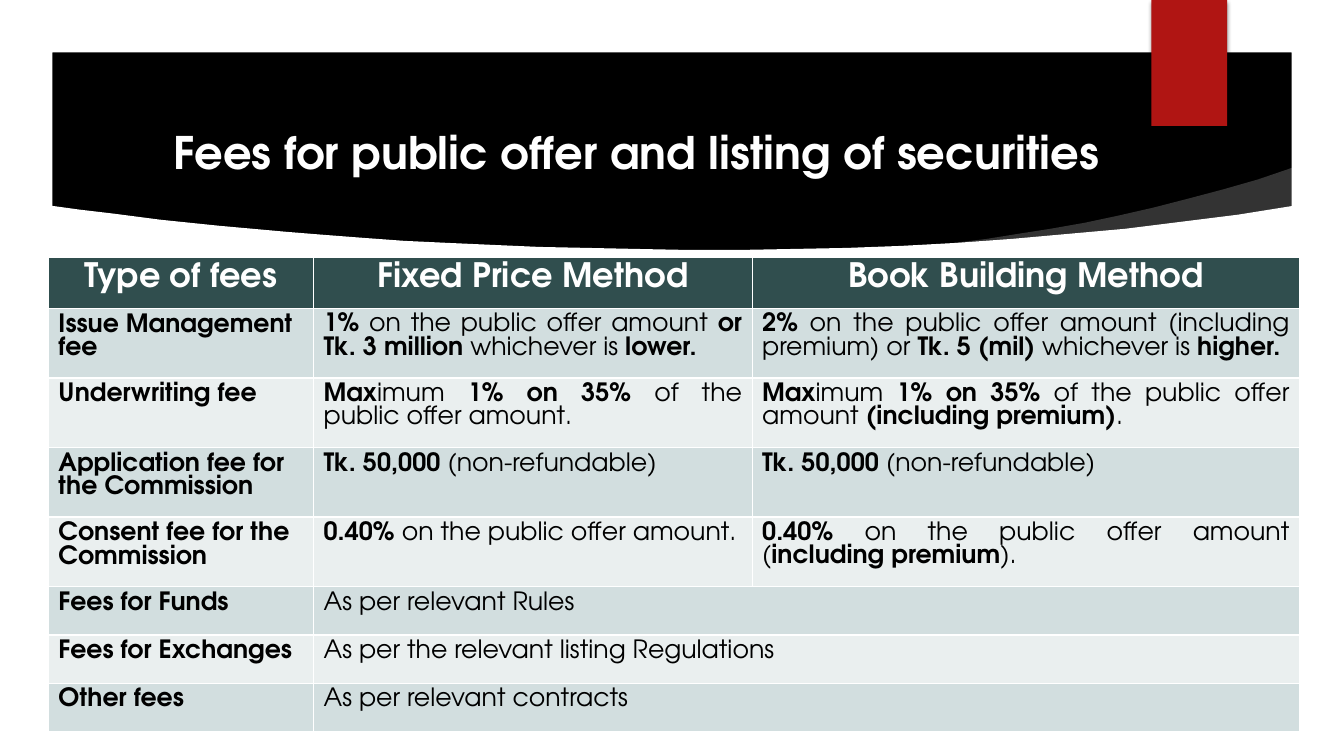
from lxml import etree
from pptx import Presentation
from pptx.dml.color import RGBColor
from pptx.enum.text import MSO_ANCHOR, PP_ALIGN
from pptx.enum.shapes import MSO_SHAPE
from pptx.oxml.ns import qn
from pptx.util import Inches, Pt

CENTER, LEFT, JUST = PP_ALIGN.CENTER, PP_ALIGN.LEFT, PP_ALIGN.JUSTIFY
MIDDLE = MSO_ANCHOR.MIDDLE
RECT = MSO_SHAPE.RECTANGLE
FONT = "TeX Gyre Adventor"
BLACK, WHITE, RED = "000000", "FFFFFF", "B01513"
DARK, BANDS = "304E4E", ("D2DEDF", "EAEFEF")
LEAD = 0.93

COLS = [2.63, 4.35, 5.43]
HEIGHTS = [0.51] + [0.69] * 4 + [0.48] * 3
HEADS = ["Type of fees", "Fixed Price Method", "Book Building Method"]
FEES = [
    ["Issue Management\nfee",
     "*1%* on the public offer amount *or Tk. 3 million *whichever is *lower.*",
     "*2%* on the public offer amount (including premium) or "
     "*Tk. 5 (mil)* whichever is *higher.*"],
    ["Underwriting fee",
     "*Max*imum *1% on 35% *of the public offer amount.",
     "*Max*imum *1% on 35%* of the public offer amount *(including premium)*."],
    ["Application fee for\nthe Commission",
     "*Tk. 50,000* (non-refundable)",
     "*Tk. 50,000* (non-refundable)"],
    ["Consent fee for the\nCommission",
     "*0.40% *on the public offer amount.",
     "*0.40%* on the public offer amount (*including premium*)."],
    ["Fees for Funds", "As per relevant Rules"],
    ["Fees for Exchanges", "As per the relevant listing Regulations"],
    ["Other fees", "As per relevant contracts"],
]

FRAME = [
    [(0, 0), (0, 7.5), (13.33, 7.5), (13.33, 0)],
    [(12.81, 6.98), (0.52, 6.98), (0.52, 0.52), (12.81, 0.52)],
]
CURVE = [
    (0.5, 2.04), (0.5, 7), (12.84, 7), (12.84, 2.04), (12.28, 2.13),
    (11.72, 2.2), (11.16, 2.27), (10.6, 2.32), (10.04, 2.37), (9.49, 2.41),
    (8.94, 2.44), (8.4, 2.46), (7.87, 2.47), (7.34, 2.48), (6.82, 2.48),
    (6.32, 2.47), (5.83, 2.46), (5.35, 2.45), (4.89, 2.43), (4.44, 2.41),
    (4.01, 2.39), (3.6, 2.36), (3.21, 2.33), (2.84, 2.3), (2.17, 2.24),
    (1.59, 2.18), (1.13, 2.12), (0.79, 2.08),
]
SWOOSH = [
    (9.34, 2.5), (10.4, 2.46), (11.7, 2.32), (12.9, 2.14), (12.83, 1.66),
    (12.48, 1.78), (12.13, 1.88), (11.79, 1.97), (11.44, 2.06), (11.09, 2.14),
    (10.76, 2.21), (10.42, 2.27), (10.1, 2.32), (9.79, 2.37), (9.3, 2.43),
]


def paint(fill, color):
    fill.solid()
    fill.fore_color.rgb = RGBColor.from_string(color)


def finish(shape, color):
    paint(shape.fill, color)
    shape.line.fill.background()
    shape.shadow.inherit = False


def outline(slide, loops, color):
    pen = None
    for loop in loops:
        points = [(Inches(x), Inches(y)) for x, y in loop]
        if pen is None:
            pen = slide.shapes.build_freeform(*points[0])
        else:
            pen.move_to(*points[0])
        pen.add_line_segments(points[1:], close=True)
    shape = pen.convert_to_shape()
    finish(shape, color)
    return shape


def fade(shape, share):
    color = shape.fill._xPr.find(qn("a:solidFill"))[0]
    etree.SubElement(color, qn("a:alpha"), val=str(share * 1000))


def shade(shape):
    effects = shape.element.spPr.find(qn("a:effectLst"))
    outer = etree.SubElement(effects, qn("a:outerShdw"), blurRad=str(Pt(3)),
                             dist=str(Pt(2)), dir="5400000", rotWithShape="0")
    color = etree.SubElement(outer, qn("a:srgbClr"), val=BLACK)
    etree.SubElement(color, qn("a:alpha"), val="45000")


def write(frame, text, size, color, align, lead=None):
    for at, line in enumerate(text.split("\n")):
        para = frame.paragraphs[0] if at == 0 else frame.add_paragraph()
        para.alignment = align
        if lead:
            para.line_spacing = Pt(round(size * lead, 1))
        for turn, part in enumerate(line.split("*")):
            if part:
                run = para.add_run()
                run.text = part
                font = run.font
                font.name, font.size, font.bold = FONT, Pt(size), turn % 2 == 1
                font.color.rgb = RGBColor.from_string(color)


def edge(cell):
    props = cell._tc.get_or_add_tcPr()
    for at, side in enumerate(("lnL", "lnR", "lnT", "lnB")):
        line = etree.Element(qn("a:" + side), w=str(Pt(1)))
        fill = etree.SubElement(line, qn("a:solidFill"))
        etree.SubElement(fill, qn("a:srgbClr"), val=WHITE)
        props.insert(at, line)


def bold(text):
    return "\n".join(f"*{line}*" for line in text.split("\n"))


def add_fees(slide):
    table = slide.shapes.add_table(
        len(HEIGHTS), len(COLS), Inches(0.48), Inches(2.55),
        Inches(sum(COLS)), Inches(sum(HEIGHTS))).table
    for col, width in zip(table.columns, COLS):
        col.width = Inches(width)
    for row, height in zip(table.rows, HEIGHTS):
        row.height = Inches(height)
    for r, texts in enumerate([HEADS] + FEES):
        for c in range(len(COLS)):
            cell = table.cell(r, c)
            paint(cell.fill, BANDS[(r - 1) % 2] if r else DARK)
            edge(cell)
        if len(texts) == 2:
            table.cell(r, 1).merge(table.cell(r, 2))
        for c, text in enumerate(texts):
            frame = table.cell(r, c).text_frame
            if r == 0:
                write(frame, bold(text), 24, WHITE, CENTER, LEAD)
            elif c == 0:
                write(frame, bold(text), 18, BLACK, LEFT, LEAD)
            else:
                align = JUST if len(texts) == 3 else LEFT
                write(frame, text, 18, BLACK, align, LEAD)


def add_title(slide):
    title = slide.shapes.title
    title.left, title.top = Inches(1.49), Inches(1.15)
    title.width, title.height = Inches(9.65), Inches(0.77)
    frame = title.text_frame
    frame.word_wrap = True
    frame.vertical_anchor = MIDDLE
    write(frame, bold("Fees for public offer and listing of securities"),
          32, WHITE, CENTER, 1.05)
    title.element.getparent().append(title.element)


def main():
    deck = Presentation()
    deck.slide_width, deck.slide_height = Inches(13.33), Inches(7.5)
    slide = deck.slides.add_slide(deck.slide_layouts[5])
    paint(slide.background.fill, BLACK)
    outline(slide, FRAME, WHITE)
    outline(slide, [CURVE], WHITE)
    fade(outline(slide, [SWOOSH], WHITE), 20)
    ribbon = slide.shapes.add_shape(RECT, Inches(11.42), 0,
                                    Inches(0.75), Inches(1.25))
    finish(ribbon, RED)
    shade(ribbon)
    add_title(slide)
    add_fees(slide)
    deck.save("out.pptx")


if __name__ == "__main__":
    main()
